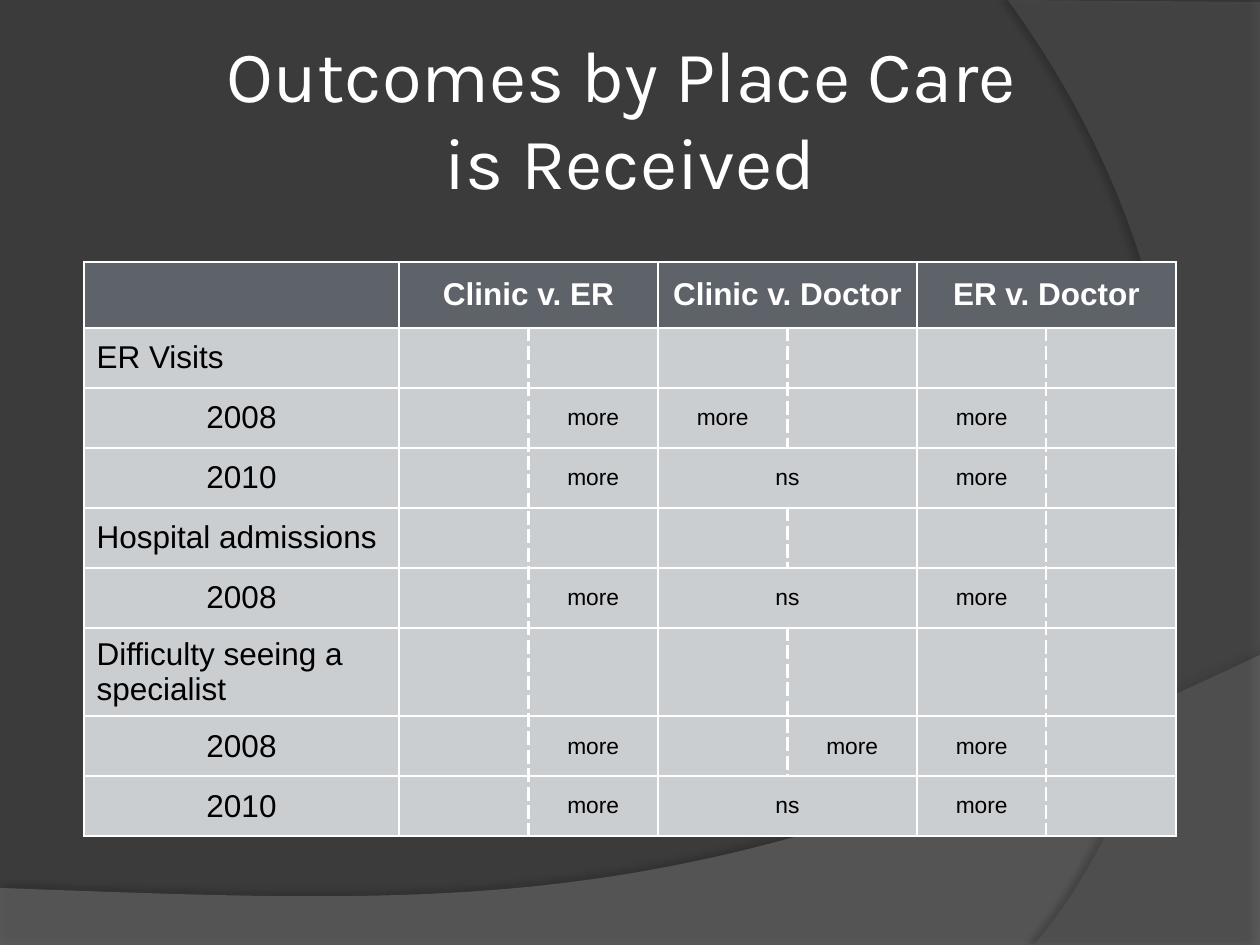
from dataclasses import dataclass

from lxml import etree
from pptx import Presentation
from pptx.dml.color import RGBColor
from pptx.enum.text import MSO_ANCHOR, PP_ALIGN
from pptx.oxml.ns import qn
from pptx.util import Pt

MIDDLE = MSO_ANCHOR.MIDDLE
LEFT, CENTER = PP_ALIGN.LEFT, PP_ALIGN.CENTER
PX = 914400 / 126
WIDTH, HEIGHT = 1260, 945


@dataclass(frozen=True)
class Theme:
    background: str = "3B3B3B"
    wave: str = "7F7F7F"
    arc: str = "5E5E5E"
    shadow: str = "000000"
    header: str = "5E636A"
    body: str = "CBCED1"
    light: str = "FFFFFF"
    dark: str = "000000"
    title_font: str = "Karla"
    table_font: str = "Arial"
    title_size: float = 41.4
    label_size: float = 18
    outcome_size: float = 13


THEME = Theme()

TITLE = "Outcomes by Place Care \vis Received"
COMPARISONS = ["Clinic v. ER", "Clinic v. Doctor", "ER v. Doctor"]
BLANK = ("", "")
FIRST, SECOND, NS = ("more", ""), ("", "more"), ("ns",)
OUTCOMES = [
    ("ER Visits", LEFT, [BLANK, BLANK, BLANK]),
    ("2008", CENTER, [SECOND, FIRST, FIRST]),
    ("2010", CENTER, [SECOND, NS, FIRST]),
    ("Hospital admissions", LEFT, [BLANK, BLANK, BLANK]),
    ("2008", CENTER, [SECOND, NS, FIRST]),
    ("Difficulty seeing a specialist", LEFT, [BLANK, BLANK, BLANK]),
    ("2008", CENTER, [SECOND, SECOND, FIRST]),
    ("2010", CENTER, [SECOND, NS, FIRST]),
]

TABLE_LEFT, TABLE_TOP = 84, 262
LABEL_WIDTH, PAIR_WIDTH = 315, 259
HEADER_HEIGHT, ROW_HEIGHT = 66, 60
SOLID, DASHED = (1, "solid"), (1.5, "sysDash")


def px(length):
    return round(length * PX)


def rgb(color):
    return RGBColor.from_string(color)


def curve(start, control_a, control_b, end, steps=48):
    points = []
    for step in range(steps + 1):
        t = step / steps
        weights = ((1 - t) ** 3, 3 * t * (1 - t) ** 2, 3 * t * t * (1 - t), t ** 3)
        anchors = (start, control_a, control_b, end)
        points.append(tuple(sum(w * a[axis] for w, a in zip(weights, anchors)) for axis in (0, 1)))
    return points


def add_color(parent, color, opacity):
    node = etree.SubElement(parent, qn("a:srgbClr"), val=color)
    etree.SubElement(node, qn("a:alpha"), val=str(opacity * 1000))


def add_backdrop(slide, outline, color, opacity, shade, distance, direction):
    points = [(px(x), px(y)) for x, y in outline]
    builder = slide.shapes.build_freeform(*points[0])
    builder.add_line_segments(points[1:], close=True)
    backdrop = builder.convert_to_shape()
    backdrop.line.fill.background()
    backdrop.fill.solid()
    backdrop.fill.fore_color.rgb = rgb(color)
    fill_color = backdrop.fill._xPr.find(qn("a:solidFill"))[0]
    etree.SubElement(fill_color, qn("a:alpha"), val=str(opacity * 1000))
    backdrop.shadow.inherit = False
    effects = backdrop._element.spPr.find(qn("a:effectLst"))
    shadow = etree.SubElement(
        effects, qn("a:outerShdw"), blurRad=str(Pt(4)), dist=str(Pt(distance)),
        dir=str(direction * 60000), algn="ctr", rotWithShape="0")
    add_color(shadow, THEME.shadow, shade)


def style(paragraph, font_name, size, color, align, bold=False):
    paragraph.alignment = align
    font = paragraph.font
    font.name, font.size, font.bold = font_name, Pt(size), bold
    font.color.rgb = rgb(color)
    for run in paragraph.runs:
        run.font.name, run.font.size, run.font.bold = font_name, Pt(size), bold
        run.font.color.rgb = rgb(color)


def add_title(slide):
    title = slide.shapes.add_textbox(0, px(38), px(WIDTH), px(157))
    frame = title.text_frame
    frame.word_wrap = True
    frame.vertical_anchor = MIDDLE
    frame.margin_left = frame.margin_right = frame.margin_top = frame.margin_bottom = px(6)
    frame.text = TITLE
    style(frame.paragraphs[0], THEME.title_font, THEME.title_size, THEME.light, CENTER)


def fill_cell(cell, text, size, align=CENTER, header=False, left=SOLID, right=SOLID):
    cell.text = text
    cell.vertical_anchor = MIDDLE
    style(cell.text_frame.paragraphs[0], THEME.table_font, size,
          THEME.light if header else THEME.dark, align, header)
    properties = cell._tc.get_or_add_tcPr()
    for side, (width, dash) in zip("LRTB", (left, right, SOLID, SOLID)):
        border = etree.SubElement(properties, qn(f"a:ln{side}"), w=str(Pt(width)))
        line_fill = etree.SubElement(border, qn("a:solidFill"))
        etree.SubElement(line_fill, qn("a:srgbClr"), val=THEME.light)
        etree.SubElement(border, qn("a:prstDash"), val=dash)
    cell.fill.solid()
    cell.fill.fore_color.rgb = rgb(THEME.header if header else THEME.body)


def fill_pair(table, row, index, outcome, size, header=False):
    first, second = (table.cell(row, 1 + 2 * index + half) for half in (0, 1))
    if len(outcome) == 1:
        first.merge(second)
        fill_cell(first, outcome[0], size, header=header)
        fill_cell(second, "", size, header=header)
    else:
        fill_cell(first, outcome[0], size, right=DASHED)
        fill_cell(second, outcome[1], size, left=DASHED)


def add_outcomes(slide):
    rows, columns = len(OUTCOMES) + 1, 1 + 2 * len(COMPARISONS)
    width = LABEL_WIDTH + PAIR_WIDTH * len(COMPARISONS)
    height = HEADER_HEIGHT + ROW_HEIGHT * len(OUTCOMES)
    table = slide.shapes.add_table(
        rows, columns, px(TABLE_LEFT), px(TABLE_TOP), px(width), px(height)).table
    table.horz_banding = False
    for index, column in enumerate(table.columns):
        column.width = px(PAIR_WIDTH / 2 if index else LABEL_WIDTH)
    for index, row in enumerate(table.rows):
        row.height = px(ROW_HEIGHT if index else HEADER_HEIGHT)

    fill_cell(table.cell(0, 0), "", THEME.label_size, header=True)
    for index, comparison in enumerate(COMPARISONS):
        fill_pair(table, 0, index, (comparison,), THEME.label_size, header=True)
    for row, (label, align, results) in enumerate(OUTCOMES, start=1):
        fill_cell(table.cell(row, 0), label, THEME.label_size, align)
        for index, outcome in enumerate(results):
            fill_pair(table, row, index, outcome, THEME.outcome_size)


def main():
    deck = Presentation()
    deck.slide_width, deck.slide_height = px(WIDTH), px(HEIGHT)
    slide = deck.slides.add_slide(deck.slide_layouts[6])
    slide.background.fill.solid()
    slide.background.fill.fore_color.rgb = rgb(THEME.background)

    wave = [(0, HEIGHT), (WIDTH, HEIGHT)] + curve((WIDTH, 655), (704, 919), (493, 906), (0, 888))
    arc = [(WIDTH, 2), (WIDTH, HEIGHT)] + curve((1034, HEIGHT), (1178, 780), (1283, 378), (1008, 0))
    add_backdrop(slide, wave, THEME.wave, 45, 35, 3.5, 270)
    add_backdrop(slide, arc, THEME.arc, 40, 45, 4, 180)
    add_title(slide)
    add_outcomes(slide)
    deck.save("out.pptx")


if __name__ == "__main__":
    main()
